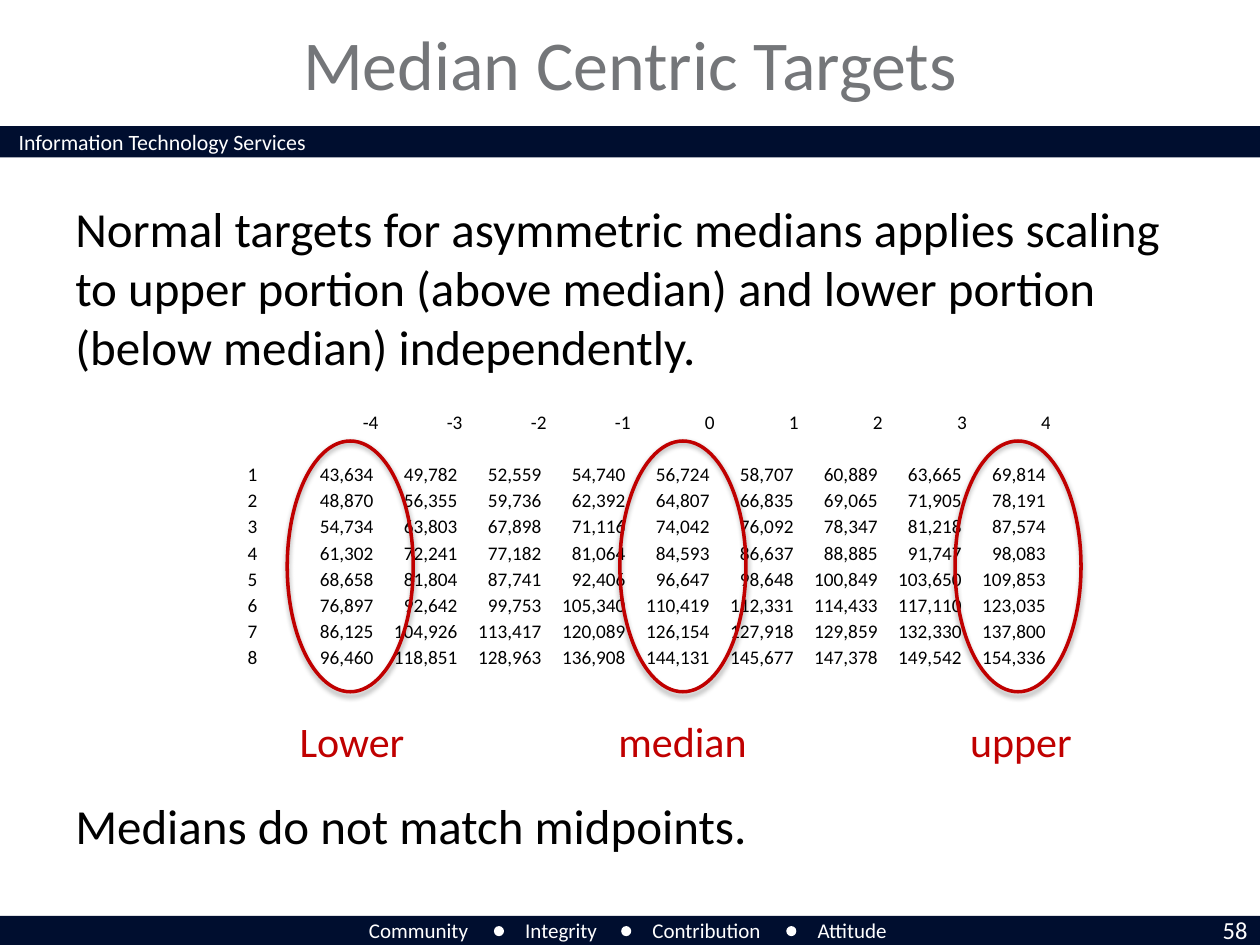
from lxml import etree
from pptx import Presentation
from pptx.dml.color import RGBColor
from pptx.enum.shapes import MSO_SHAPE
from pptx.enum.text import MSO_ANCHOR, PP_ALIGN
from pptx.oxml.ns import qn
from pptx.util import Inches, Pt

LEFT, CENTER, RIGHT = PP_ALIGN.LEFT, PP_ALIGN.CENTER, PP_ALIGN.RIGHT
MIDDLE, BOTTOM = MSO_ANCHOR.MIDDLE, MSO_ANCHOR.BOTTOM
RECTANGLE, OVAL = MSO_SHAPE.RECTANGLE, MSO_SHAPE.OVAL

# Content
TITLE = "Median Centric Targets"
DEPARTMENT = "Information Technology Services"
PAGE_NUMBER = "58"
STATEMENTS = [
    "Normal targets for asymmetric medians applies scaling to upper portion "
    "(above median) and lower portion (below median) independently.",
    "Medians do not match midpoints.",
]
VALUES = [  # word, left, width
    ("Community", 2.83, 1.0),
    ("Integrity", 4.07, 0.8),
    ("Contribution", 5.08, 1.1),
    ("Attitude", 6.39, 0.78),
]
STEPS = range(-4, 5)
TARGETS = [
    (43634, 49782, 52559, 54740, 56724, 58707, 60889, 63665, 69814),
    (48870, 56355, 59736, 62392, 64807, 66835, 69065, 71905, 78191),
    (54734, 63803, 67898, 71116, 74042, 76092, 78347, 81218, 87574),
    (61302, 72241, 77182, 81064, 84593, 86637, 88885, 91747, 98083),
    (68658, 81804, 87741, 92406, 96647, 98648, 100849, 103650, 109853),
    (76897, 92642, 99753, 105340, 110419, 112331, 114433, 117110, 123035),
    (86125, 104926, 113417, 120089, 126154, 127918, 129859, 132330, 137800),
    (96460, 118851, 128963, 136908, 144131, 145677, 147378, 149542, 154336),
]
HIGHLIGHTS = [  # label, ellipse left, label left, label width
    ("median", 4.92, 4.81, 1.23),
    ("Lower", 2.28, 2.28, 1.04),
    ("upper", 7.58, 7.6, 1.02),
]

THEME = {
    "font": "Calibri",
    "navy": RGBColor.from_string("000E2F"),
    "white": RGBColor.from_string("FFFFFF"),
    "black": RGBColor.from_string("000000"),
    "gray": RGBColor.from_string("747679"),
    "red": RGBColor.from_string("C00000"),
    "title": 40, "body": 28, "label": 24, "page": 14,
    "department": 12.5, "footer": 12, "table": 11,
}


def add_run(paragraph, text, size, color, align=LEFT):
    paragraph.alignment = align
    run = paragraph.add_run()
    run.text = text
    run.font.name = THEME["font"]
    run.font.size = Pt(THEME[size])
    run.font.color.rgb = THEME[color]


def add_text(slide, box, text, size, color, align=LEFT, wrap=True):
    shape = slide.shapes.add_textbox(*map(Inches, box))
    shape.text_frame.word_wrap = wrap
    add_run(shape.text_frame.paragraphs[0], text, size, color, align)
    return shape


def add_solid(slide, kind, box, color):
    shape = slide.shapes.add_shape(kind, *map(Inches, box))
    shape.shadow.inherit = False
    shape.fill.solid()
    shape.fill.fore_color.rgb = THEME[color]
    shape.line.fill.background()


def add_ring(slide, box):
    ring = slide.shapes.add_shape(OVAL, *map(Inches, box))
    ring.fill.background()
    ring.line.color.rgb = THEME["red"]
    ring.line.width = Pt(2)
    ring.shadow.inherit = False
    effects = ring.element.spPr.find(qn("a:effectLst"))
    shadow = etree.SubElement(effects, qn("a:outerShdw"), blurRad=str(Pt(3.1)),
                              dist=str(Pt(1.8)), dir="5400000", rotWithShape="0")
    color = etree.SubElement(shadow, qn("a:srgbClr"), val="000000")
    etree.SubElement(color, qn("a:alpha"), val="35000")


def add_target_table(slide):
    header = [""] + [str(step) for step in STEPS]
    rows = [header, [""] * len(header)]
    for number, targets in enumerate(TARGETS, start=1):
        rows.append([str(number)] + [f"{target:,}" for target in targets])
    frame = slide.shapes.add_table(len(rows), len(header), Inches(1.67), Inches(3.24),
                                   Inches(6.67), Inches(2.08))
    table = frame.table
    table.first_row = table.horz_banding = False
    for row_index, row in enumerate(rows):
        for column_index, text in enumerate(row):
            cell = table.cell(row_index, column_index)
            cell.fill.background()
            cell.vertical_anchor = BOTTOM
            cell.margin_left = cell.margin_right = 0
            cell.margin_top = cell.margin_bottom = 0
            paragraph = cell.text_frame.paragraphs[0]
            if text:
                add_run(paragraph, text, "table", "black", RIGHT if column_index else CENTER)
            else:  # keeps empty rows as low as the others
                etree.SubElement(paragraph._p, qn("a:endParaRPr"),
                                 sz=str(THEME["table"] * 100))
            if row_index and column_index:
                cell.margin_right = Inches(0.04)


def main():
    presentation = Presentation()
    presentation.slide_width, presentation.slide_height = Inches(10), Inches(7.5)
    slide = presentation.slides.add_slide(presentation.slide_layouts[5])

    # Title
    title = slide.shapes.title
    title.left, title.top, title.width, title.height = map(Inches, (1, 0.1, 8, 0.8))
    title.text_frame.vertical_anchor = MIDDLE
    add_run(title.text_frame.paragraphs[0], TITLE, "title", "gray", CENTER)

    # Header and footer bands
    add_solid(slide, RECTANGLE, (0, 1, 10, 0.25), "navy")
    add_solid(slide, RECTANGLE, (0, 7.27, 10, 0.23), "navy")
    add_text(slide, (0.05, 0.97, 3.4, 0.32), DEPARTMENT, "department", "white")
    for index, (word, left, width) in enumerate(VALUES):
        add_text(slide, (left, 7.23, width, 0.3), word, "footer", "white", wrap=False)
        if index:
            add_solid(slide, OVAL, (left - 0.15, 7.35, 0.08, 0.08), "white")
    add_text(slide, (9.24, 7.21, 0.76, 0.34), PAGE_NUMBER, "page", "white", RIGHT)

    # Statements above and below the table
    body = add_text(slide, (0.5, 1.53, 9, 5.5), STATEMENTS[0], "body", "black")
    closing = body.text_frame.add_paragraph()
    closing.space_before = Pt(240)
    add_run(closing, STATEMENTS[1], "body", "black")

    # Table with highlighted columns
    add_target_table(slide)
    for label, ring_left, label_left, label_width in HIGHLIGHTS:
        add_ring(slide, (ring_left, 3.5, 1, 1.99))
        add_text(slide, (label_left, 5.63, label_width, 0.5), label, "label", "red", wrap=False)

    presentation.save("out.pptx")


if __name__ == "__main__":
    main()
